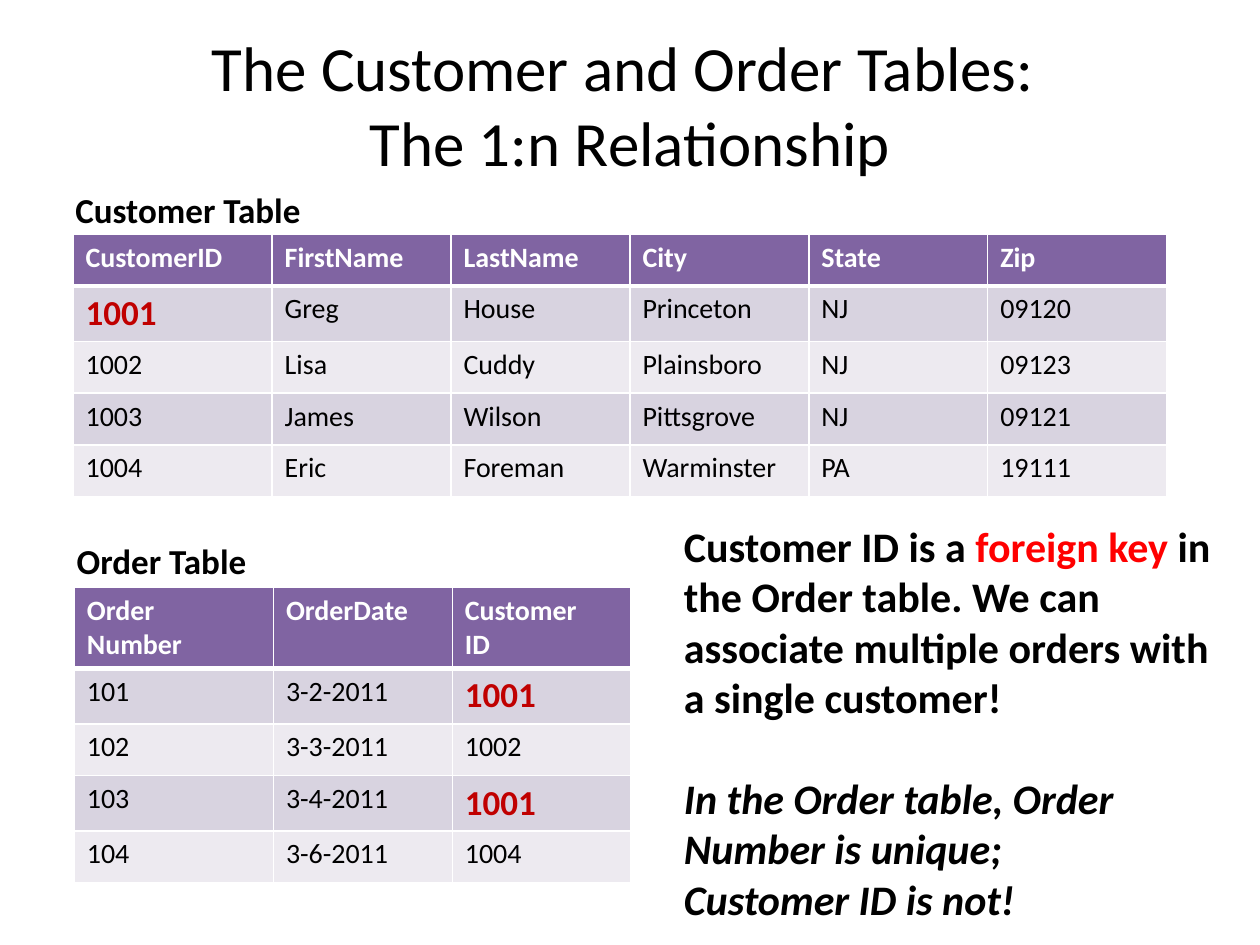
from dataclasses import dataclass

from lxml import etree
from pptx import Presentation
from pptx.dml.color import RGBColor
from pptx.enum.text import MSO_ANCHOR, PP_ALIGN
from pptx.oxml.ns import qn
from pptx.util import Inches, Length, Pt

CENTER, LEFT = PP_ALIGN.CENTER, PP_ALIGN.LEFT
MIDDLE, TOP = MSO_ANCHOR.MIDDLE, MSO_ANCHOR.TOP

# The slide is a grid of 100 columns by 75 rows
WIDTH, HEIGHT = Inches(10), Inches(7.5)
COLUMNS, ROWS = 100, 75


@dataclass(frozen=True)
class Theme:
    font: str = "Calibri"
    ink: str = "000000"
    paper: str = "FFFFFF"
    header: str = "8064A2"
    bands: tuple[str, str] = ("D8D3E0", "EDEAF0")
    key: str = "C00000"
    accent: str = "FF0000"
    title: int = 36
    note: int = 24
    label: int = 20
    cell: int = 16
    rule: int = 1
    header_rule: int = 3


THEME = Theme()


@dataclass(frozen=True)
class Area:
    left: float
    top: float
    width: float
    height: float


@dataclass(frozen=True)
class Span:
    text: str
    color: str = THEME.ink
    bold: bool = True
    italic: bool = False


@dataclass(frozen=True)
class TextBlock:
    area: Area
    size: int
    paragraphs: list[list[Span]]
    wrap: bool = True
    align: PP_ALIGN = LEFT
    anchor: MSO_ANCHOR = TOP
    gap: float = 0


@dataclass(frozen=True)
class DataTable:
    left: float
    top: float
    records: list[list[str]]


KEY_VALUE = "1001"
ID_COLUMN, FIELD_COLUMN, RECORD_ROW = 15.8, 14.2, 4.1

TEXTS = [
    TextBlock(Area(5, 2, 90, 12.5), THEME.title,
              [[Span("The Customer and Order Tables: \vThe 1:n Relationship", bold=False)]],
              align=CENTER, anchor=MIDDLE),
    TextBlock(Area(5, 14.5, 23, 4.4), THEME.label, [[Span("Customer Table")]], wrap=False),
    TextBlock(Area(5.1, 42.3, 17.5, 4.4), THEME.label, [[Span("Order Table")]], wrap=False),
    TextBlock(Area(53.3, 40.8, 45, 33.3), THEME.note,
              [[Span("Customer ID is a "),
                Span("foreign key ", THEME.accent),
                Span("in the Order table. We can associate multiple orders "
                     "with a single customer!")],
               [Span("In the Order table, Order Number is unique; \vCustomer ID is not!",
                     italic=True)]],
              gap=1.2 * THEME.note),
]

TABLES = [
    DataTable(5.8, 18.6, [
        ["CustomerID", "FirstName", "LastName", "City", "State", "Zip"],
        ["1001", "Greg", "House", "Princeton", "NJ", "09120"],
        ["1002", "Lisa", "Cuddy", "Plainsboro", "NJ", "09123"],
        ["1003", "James", "Wilson", "Pittsgrove", "NJ", "09121"],
        ["1004", "Eric", "Foreman", "Warminster", "PA", "19111"],
    ]),
    DataTable(5.9, 46.6, [
        ["Order\vNumber", "OrderDate", "Customer\vID"],
        ["101", "3-2-2011", "1001"],
        ["102", "3-3-2011", "1002"],
        ["103", "3-4-2011", "1001"],
        ["104", "3-6-2011", "1004"],
    ]),
]


def across(columns: float) -> Length:
    return Length(round(WIDTH * columns / COLUMNS))


def down(rows: float) -> Length:
    return Length(round(HEIGHT * rows / ROWS))


def style_paragraph(paragraph, span: Span, size: int, first_run: int = 0) -> None:
    for run in paragraph.runs[first_run:]:
        run.font.name = THEME.font
        run.font.size = Pt(size)
        run.font.bold = span.bold
        run.font.italic = span.italic
        run.font.color.rgb = RGBColor.from_string(span.color)
    # Line breaks carry the type size too
    for line_break in paragraph._p.findall(qn("a:br")):
        etree.SubElement(line_break, qn("a:rPr"), sz=str(size * 100))


def draw_text(slide, block: TextBlock) -> None:
    area = block.area
    box = slide.shapes.add_textbox(across(area.left), down(area.top),
                                   across(area.width), down(area.height))
    frame = box.text_frame
    frame.word_wrap = block.wrap
    frame.vertical_anchor = block.anchor
    for index, spans in enumerate(block.paragraphs):
        paragraph = frame.add_paragraph() if index else frame.paragraphs[0]
        paragraph.alignment = block.align
        paragraph.space_before = Pt(block.gap if index else 0)
        paragraph.text = spans[0].text
        style_paragraph(paragraph, spans[0], block.size)
        for span in spans[1:]:
            first_run = len(paragraph.runs)
            paragraph.add_run().text = span.text
            style_paragraph(paragraph, span, block.size, first_run)


def draw_borders(cell, top: int, bottom: int) -> None:
    properties = cell._tc.get_or_add_tcPr()
    widths = {"a:lnL": THEME.rule, "a:lnR": THEME.rule, "a:lnT": top, "a:lnB": bottom}
    for side, width in widths.items():
        line = etree.SubElement(properties, qn(side), w=str(Pt(width)))
        fill = etree.SubElement(line, qn("a:solidFill"))
        etree.SubElement(fill, qn("a:srgbClr"), val=THEME.paper)


def draw_table(slide, data: DataTable) -> None:
    records = data.records
    widths = [ID_COLUMN] + [FIELD_COLUMN] * (len(records[0]) - 1)
    table = slide.shapes.add_table(len(records), len(widths),
                                   across(data.left), down(data.top), across(sum(widths)),
                                   down(RECORD_ROW * len(records))).table
    for column, width in zip(table.columns, widths):
        column.width = across(width)
    for row, record in enumerate(records):
        table.rows[row].height = down(RECORD_ROW)
        for column, value in enumerate(record):
            cell = table.cell(row, column)
            is_header, is_key = row == 0, value == KEY_VALUE
            draw_borders(cell,
                         top=THEME.header_rule if row == 1 else THEME.rule,
                         bottom=THEME.header_rule if is_header else THEME.rule)
            cell.fill.solid()
            fill = THEME.header if is_header else THEME.bands[(row - 1) % 2]
            cell.fill.fore_color.rgb = RGBColor.from_string(fill)
            color = THEME.paper if is_header else THEME.key if is_key else THEME.ink
            paragraph = cell.text_frame.paragraphs[0]
            paragraph.text = value
            style_paragraph(paragraph, Span(value, color, bold=is_header or is_key),
                            THEME.label if is_key else THEME.cell)


def main() -> None:
    deck = Presentation()
    deck.slide_width, deck.slide_height = WIDTH, HEIGHT
    slide = deck.slides.add_slide(deck.slide_layouts[6])
    for data in TABLES:
        draw_table(slide, data)
    for block in TEXTS:
        draw_text(slide, block)
    deck.save("out.pptx")


if __name__ == "__main__":
    main()
